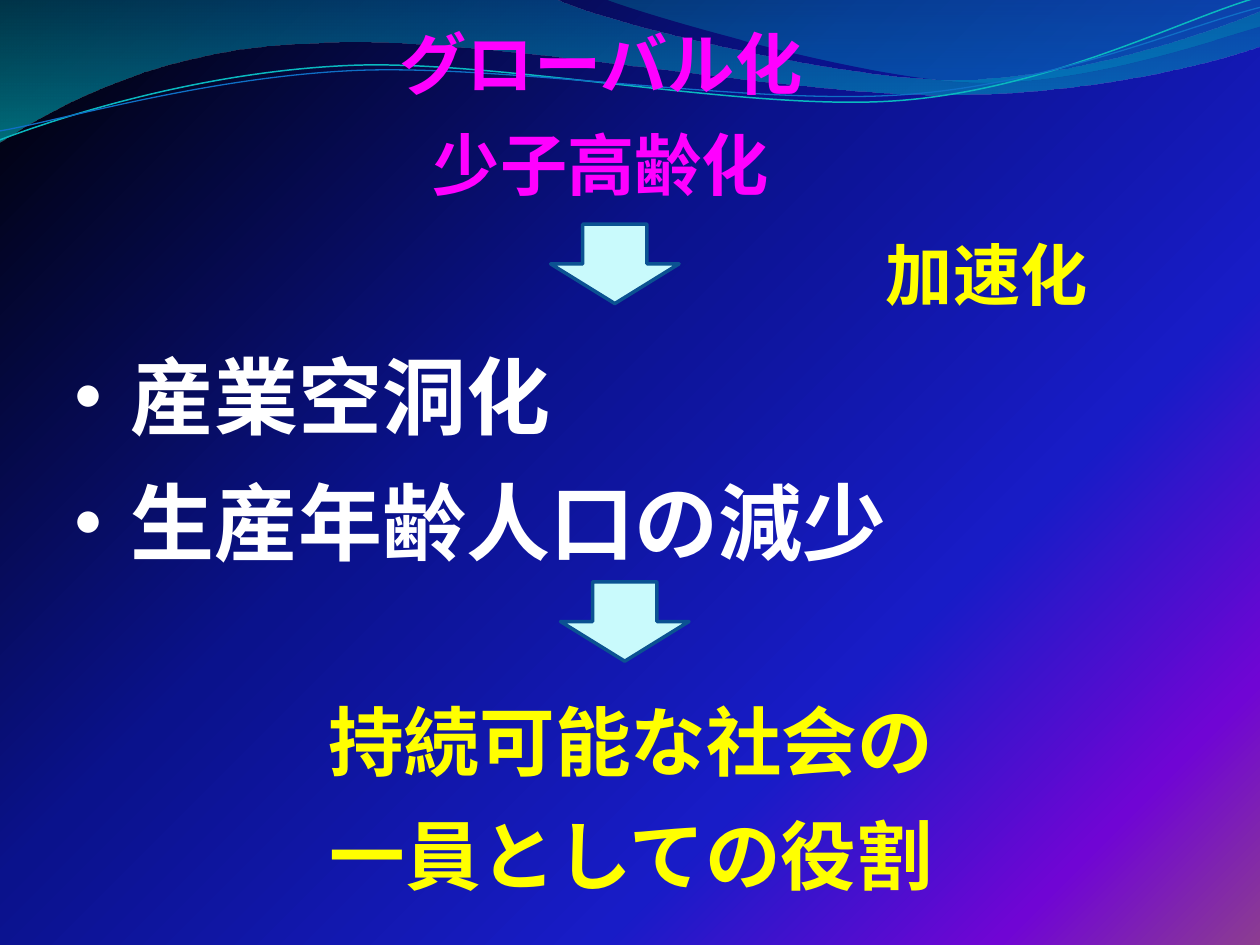
from lxml import etree
from pptx import Presentation
from pptx import util as u
from pptx.dml.color import RGBColor
from pptx.enum import shapes, text
from pptx.oxml.ns import qn

FONT = "Noto Sans CJK JP"
color = RGBColor.from_string


def set_gradient(fill, element, stops, angle):
    """Apply (position %, hex colour, opacity %) stops; angle runs clockwise."""
    fill.gradient()
    fill.gradient_angle = 360 - angle
    stop_list = next(element.iter(qn("a:gsLst")))
    for old in list(stop_list):
        stop_list.remove(old)
    for position, hex_color, opacity in stops:
        stop = etree.SubElement(stop_list, qn("a:gs"), pos=str(position * 1000))
        tone = etree.SubElement(stop, qn("a:srgbClr"), val=hex_color)
        if opacity < 100:
            etree.SubElement(tone, qn("a:alpha"), val=str(opacity * 1000))


prs = Presentation()
prs.slide_width, prs.slide_height = u.Cm(25.4), u.Cm(19.05)
slide = prs.slides.add_slide(prs.slide_layouts[5])
set_gradient(slide.background.fill, slide._element,
             [(0, "000000", 100), (40, "0A128C", 100), (70, "181CC7", 100),
              (88, "7005D4", 100), (100, "8C3D91", 100)], 45)

# Waves in cm: start point, then lines (2 numbers) and Bézier curves (6 numbers)
waves = [
    ((0, 0), [(11.18, -0.03), (12.09, 0.43, 16.87, 1.6, 19.25, 1.6),
              (21.67, 1.6, 24.33, 0.66, 25.4, 0.23), (25.43, 0.91),
              (24.97, 1.12, 22.1, 1.93, 18.95, 1.91),
              (15.8, 1.91, 9.7, 0.71, 6.53, 0.86),
              (3.28, 0.91, 1.17, 2.11, -0.03, 2.87), (0, 0)],
     [(0, "0074A1", 45), (100, "00C6CF", 55)], None),
    ((12.17, -0.03), [(12.93, 0.28, 17.32, 1.57, 19.53, 1.65),
                      (21.74, 1.75, 24.41, 0.81, 25.4, 0.53), (25.4, 0),
                      (12.17, -0.03)],
     [(0, "00A1A9", 30), (80, "008BBF", 45)], None),
    ((0, 2.82), [(1.22, 2.36, 4.01, 1.45, 7.04, 1.32),
                 (10.03, 1.19, 15.06, 2.26, 18.11, 2.03),
                 (21.16, 1.8, 23.83, 0.38, 25.35, -0.05)], None, ("0AB8BF", 0.85)),
    ((0, 2.64), [(1.19, 2.44, 4.17, 1.55, 7.19, 1.42),
                 (10.24, 1.3, 15.16, 2.13, 18.21, 1.91),
                 (21.23, 1.7, 23.9, 0.53, 25.4, 0.15)], None, ("0F6FC6", 0.75)),
]
for start, segments, stops, line in waves:
    builder = slide.shapes.build_freeform(*map(u.Cm, start))
    for segment in segments:
        lengths = [u.Cm(value) for value in segment]
        builder.add_line_segments(list(zip(lengths[::2], lengths[1::2])),
                                  close=stops is not None and segment is segments[-1])
    wave = builder.convert_to_shape()
    # Join the three points of each curve into one Bézier segment
    steps = iter(list(wave._element.iter(qn("a:lnTo"))))
    for segment in segments:
        first = next(steps)
        if len(segment) == 6:
            first.addprevious(curve := etree.Element(qn("a:cubicBezTo")))
            for step in (first, next(steps), next(steps)):
                curve.append(step[0])
                step.getparent().remove(step)
    wave.shadow.inherit = False
    if stops:
        set_gradient(wave.fill, wave._element, stops, 90)
        wave.line.fill.background()
    else:
        wave.fill.background()
        wave.line.color.rgb = color(line[0])
        wave.line.width = u.Pt(line[1])

title = slide.shapes.title
slide.shapes._spTree.append(title._element)  # in front of the waves
effects, speed, role = (slide.shapes.add_textbox(0, 0, 0, 0) for _ in range(3))
CENTER, LEFT = text.PP_ALIGN.CENTER, text.PP_ALIGN.LEFT
BOTTOM, TOP = text.MSO_ANCHOR.BOTTOM, text.MSO_ANCHOR.TOP
for box, place, words, size, hex_color, align, anchor in [
    (title, (2.31, 0.91, 19.61, 3.4), "グローバル化\n少子高齢化", 48, "FF00FF", CENTER, BOTTOM),
    (effects, (0.69, 6.32, 24.71, 5.41), "・産業空洞化\n・生産年齢人口の減少",
     60, "FFFFFF", LEFT, BOTTOM),
    (speed, (15.09, 4.72, 9.6, 1.8), "加速化", 48, "FFFF00", CENTER, BOTTOM),
    (role, (2.11, 13.51, 21.21, 4.88), "持続可能な社会の\n一員としての役割",
     54, "FFFF00", CENTER, TOP),
]:
    box.left, box.top, box.width, box.height = map(u.Cm, place)
    frame = box.text_frame
    frame.text = words
    frame.word_wrap = True
    frame.auto_size = text.MSO_AUTO_SIZE.NONE
    frame.vertical_anchor = anchor
    for paragraph in frame.paragraphs:
        paragraph.alignment = align
        paragraph.line_spacing = u.Pt(1.2 * size)
        for run in paragraph.runs:
            run.font.size = u.Pt(size)
            run.font.bold = True
            run.font.color.rgb = color(hex_color)
            run.font.name = FONT
            properties = run._r.get_or_add_rPr()
            properties.set("cap", "small")
            etree.SubElement(properties, qn("a:ea"), typeface=FONT)
role.text_frame.auto_size = text.MSO_AUTO_SIZE.SHAPE_TO_FIT_TEXT

for left, top in [(11.1, 4.52), (11.3, 11.73)]:
    arrow = slide.shapes.add_shape(shapes.MSO_SHAPE.DOWN_ARROW,
                                   u.Cm(left), u.Cm(top), u.Cm(2.59), u.Cm(1.6))
    arrow.shadow.inherit = False
    arrow.fill.solid()
    arrow.fill.fore_color.rgb = color("C9FAFC")
    arrow.line.color.rgb = color("0B5292")
    arrow.line.width = u.Pt(2)

prs.save("out.pptx")
